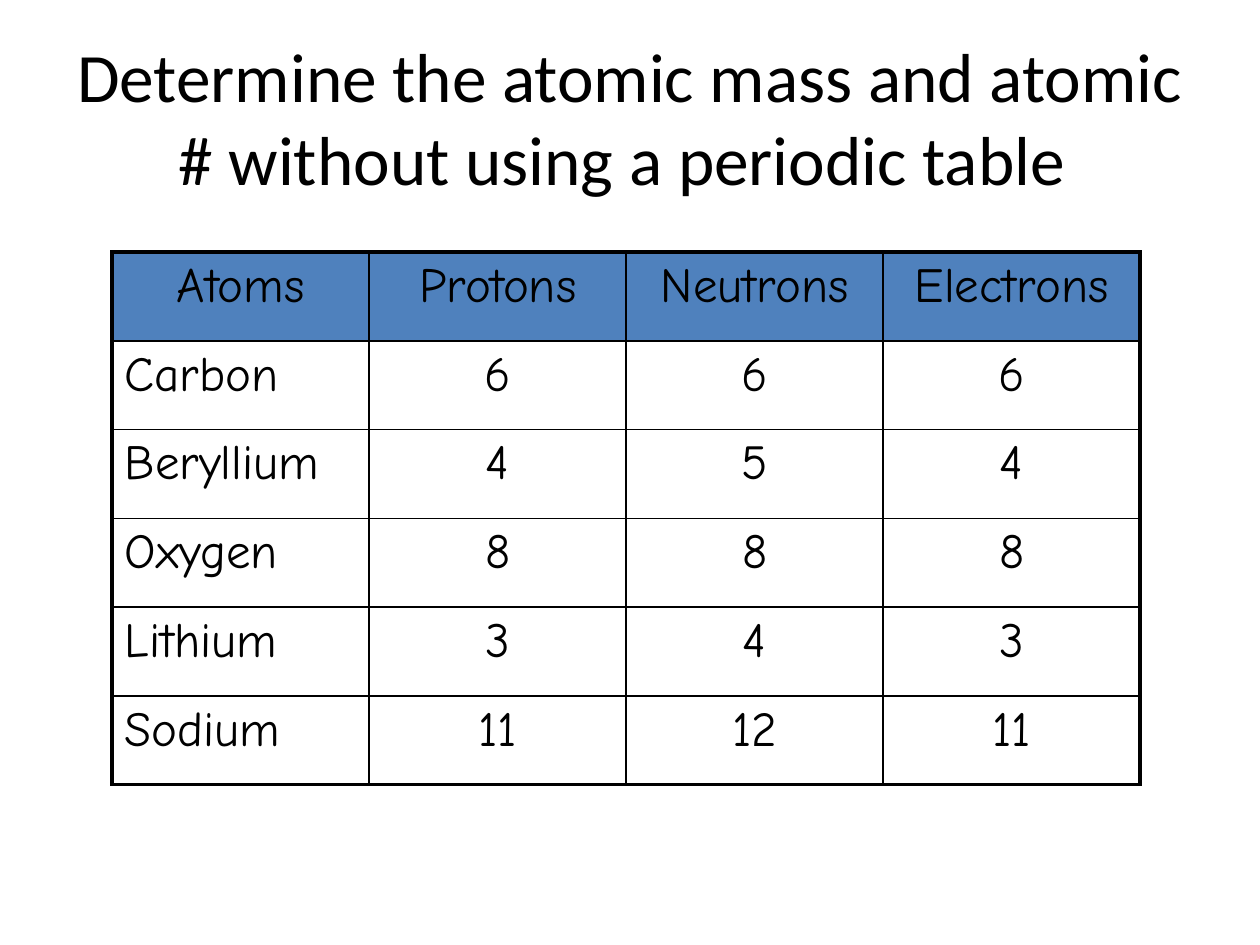
from dataclasses import dataclass

from lxml.etree import SubElement
from pptx import Presentation
from pptx.dml.color import RGBColor
from pptx.enum.text import MSO_ANCHOR as Anchor, PP_ALIGN as Align
from pptx.oxml.ns import qn
from pptx.util import Pt

COLORS = {"text": "000000", "border": "000000", "header": "4F81BD"}
OUTER_BORDER, INNER_BORDER = 2.25, 1
TABLE_LEFT, TABLE_TOP = 64.1, 144
COLUMN_WIDTH, ROW_HEIGHT = 146.88, 50.76


@dataclass
class TextFormat:
    font: str
    size: float
    align: Align
    space_before: float = 0


@dataclass
class Atom:
    name: str
    protons: int
    neutrons: int
    electrons: int


TITLE = TextFormat("Calibri", 39.6, Align.CENTER)
CENTERED = TextFormat("Comic Neue", 28, Align.CENTER, 5.6)
NAME = TextFormat("Comic Neue", 28, Align.LEFT, 5.6)

HEADINGS = ["Atoms", "Protons", "Neutrons", "Electrons"]
ATOMS = [
    Atom("Carbon", 6, 6, 6),
    Atom("Beryllium", 4, 5, 4),
    Atom("Oxygen", 8, 8, 8),
    Atom("Lithium", 3, 4, 3),
    Atom("Sodium", 11, 12, 11),
]


def write_text(frame, text: str, style: TextFormat) -> None:
    para = frame.paragraphs[0]
    span = para.add_run()
    span.text = text
    para_values = {"alignment": style.align, "space_before": Pt(style.space_before)}
    font_values = {"name": style.font, "size": Pt(style.size)}
    for target, values in ((para, para_values), (span.font, font_values)):
        for name, value in values.items():
            setattr(target, name, value)
    span.font.color.rgb = RGBColor.from_string(COLORS["text"])


def set_borders(cell, widths: dict[str, float]) -> None:
    """Draw the cell's lines; they must come before its fill in the XML."""
    properties = cell._tc.get_or_add_tcPr()
    for position, (side, width) in enumerate(widths.items()):
        line = SubElement(properties, qn(f"a:ln{side}"), w=str(int(Pt(width))))
        solid = SubElement(line, qn("a:solidFill"))
        SubElement(solid, qn("a:srgbClr"), val=COLORS["border"])
        properties.insert(position, line)


def add_title(page, text: str) -> None:
    box = page.shapes.add_textbox(Pt(36), Pt(21.6), Pt(648), Pt(90))
    box.text_frame.word_wrap = True
    box.text_frame.vertical_anchor = Anchor.MIDDLE
    write_text(box.text_frame, text, TITLE)


def add_atom_table(page, headings: list[str], atoms: list[Atom]) -> None:
    rows = [headings] + [[a.name, a.protons, a.neutrons, a.electrons] for a in atoms]
    last_row, last_column = len(rows) - 1, len(headings) - 1
    table = page.shapes.add_table(
        len(rows), len(headings), Pt(TABLE_LEFT), Pt(TABLE_TOP),
        Pt(COLUMN_WIDTH * len(headings)), Pt(ROW_HEIGHT * len(rows))).table
    for column in table.columns:
        column.width = Pt(COLUMN_WIDTH)
    for row in table.rows:
        row.height = Pt(ROW_HEIGHT)

    for r, values in enumerate(rows):
        for c, value in enumerate(values):
            cell = table.cell(r, c)
            is_header = r == 0
            write_text(cell.text_frame, str(value),
                       NAME if c == 0 and not is_header else CENTERED)
            if is_header:
                cell.fill.solid()
                cell.fill.fore_color.rgb = RGBColor.from_string(COLORS["header"])
            else:
                cell.fill.background()
            # Heavy frame outside, thin grid inside
            at_edge = {"L": c == 0, "R": c == last_column,
                       "T": is_header, "B": r == last_row}
            set_borders(cell, {side: OUTER_BORDER if edge else INNER_BORDER
                               for side, edge in at_edge.items()})


def main() -> None:
    deck = Presentation()
    deck.slide_width, deck.slide_height = Pt(720), Pt(540)
    page = deck.slides.add_slide(deck.slide_layouts[6])
    add_title(page, "Determine the atomic mass and atomic # without using a periodic table ")
    add_atom_table(page, HEADINGS, ATOMS)
    deck.save("out.pptx")


if __name__ == "__main__":
    main()
